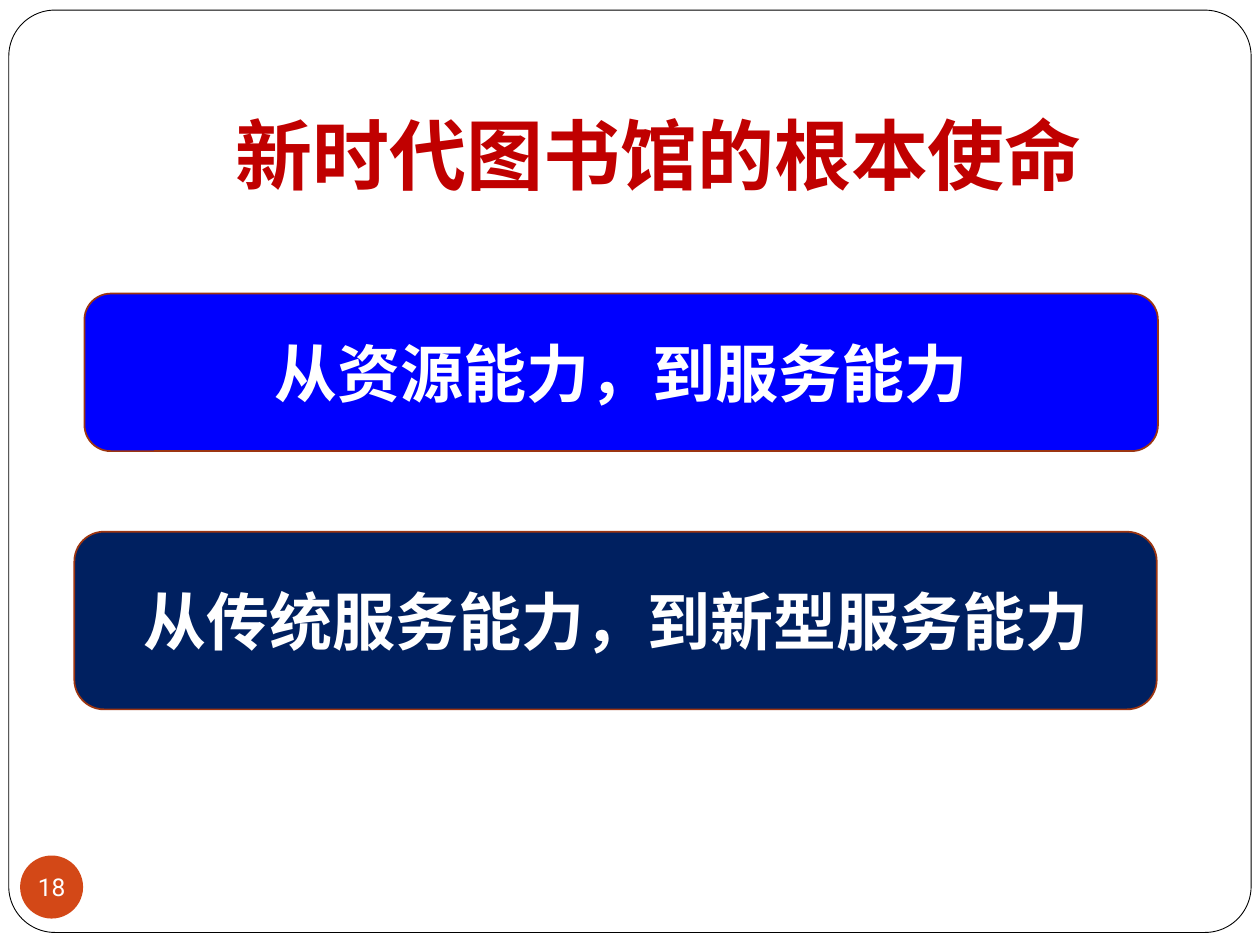
from dataclasses import dataclass
from typing import Optional

from pptx import Presentation
from pptx.dml.color import RGBColor
from pptx.enum.shapes import MSO_SHAPE
from pptx.enum.text import MSO_ANCHOR, MSO_AUTO_SIZE, PP_ALIGN
from pptx.util import Inches, Pt

HUES = {
    "white": "FFFFFF", "black": "000000", "red": "C00000", "rust": "9C3511",
    "orange": "D34817", "blue": "0000FF", "navy": "002060",
}
WIDE, HIGH = Inches(10), Inches(7.5)


@dataclass
class Area:
    """Left, top, width and height in percent of the slide."""
    left: float
    top: float
    wide: float
    high: float

    def place(self) -> dict:
        return {
            "left": int(WIDE * self.left / 100),
            "top": int(HIGH * self.top / 100),
            "width": int(WIDE * self.wide / 100),
            "height": int(HIGH * self.high / 100),
        }


@dataclass
class Type:
    name: str
    size: int
    hue: str
    bold: bool = False


@dataclass
class Block:
    area: Area
    fill: str
    kind: MSO_SHAPE = MSO_SHAPE.ROUNDED_RECTANGLE
    edge: Optional[str] = None
    width: float = 1
    text: str = ""
    type: Optional[Type] = None
    inset: Optional[float] = None
    wrap: bool = True


def color(hue: str) -> RGBColor:
    return RGBColor.from_string(HUES[hue])


def apply(target, values: dict) -> None:
    for name, value in values.items():
        setattr(target, name, value)


def write(frame, text: str, style: Type) -> None:
    para = frame.paragraphs[0]
    para.alignment = PP_ALIGN.CENTER
    run = para.add_run()
    run.text = text
    apply(run.font, {"name": style.name, "size": Pt(style.size), "bold": style.bold})
    run.font.color.rgb = color(style.hue)


def draw(slide, block: Block):
    shape = slide.shapes.add_shape(block.kind, **block.area.place())
    shape.shadow.inherit = False
    shape.fill.solid()
    shape.fill.fore_color.rgb = color(block.fill)
    if block.edge:
        shape.line.color.rgb = color(block.edge)
        shape.line.width = Pt(block.width)
    else:
        shape.line.fill.background()
    if block.text:
        frame = shape.text_frame
        apply(frame, {"word_wrap": block.wrap, "vertical_anchor": MSO_ANCHOR.MIDDLE})
        if block.inset is not None:
            sides = ("left", "top", "right", "bottom")
            apply(frame, {f"margin_{side}": Inches(block.inset) for side in sides})
        write(frame, block.text, block.type)
    return shape


HEAD = Type("Roboto", 44, "red", True)
BODY = Type("Times New Roman", 36, "white", True)
PAGE = Type("Roboto", 14, "white")

BORDER = Block(Area(0.7, 1.07, 98.6, 97.6), "white", edge="black", width=0.5)
BLOCKS = [
    Block(Area(1.6, 90.53, 5, 6.67), "orange", MSO_SHAPE.OVAL,
          text="18", type=PAGE, inset=0, wrap=False),
    Block(Area(6.7, 31.07, 85.2, 16.67), "blue", edge="rust",
          text="从资源能力，到服务能力", type=BODY),
    Block(Area(5.9, 56.27, 85.9, 18.8), "navy", edge="rust",
          text="从传统服务能力，到新型服务能力", type=BODY),
]


def main() -> None:
    deck = Presentation()
    apply(deck, {"slide_width": WIDE, "slide_height": HIGH})
    slide = deck.slides.add_slide(deck.slide_layouts[5])

    # Page border, behind the title
    border = draw(slide, BORDER)
    border.adjustments[0] = 0.05
    title = slide.shapes.title
    title.element.addprevious(border.element)

    # Title
    apply(title, Area(9.8, 8, 85, 14.53).place())
    apply(title.text_frame, {
        "auto_size": MSO_AUTO_SIZE.NONE,
        "vertical_anchor": MSO_ANCHOR.BOTTOM,
        "margin_bottom": Inches(0.1),
    })
    write(title.text_frame, "新时代图书馆的根本使命", HEAD)

    # Page number and the two missions
    for block in BLOCKS:
        draw(slide, block)

    deck.save("out.pptx")


if __name__ == "__main__":
    main()
